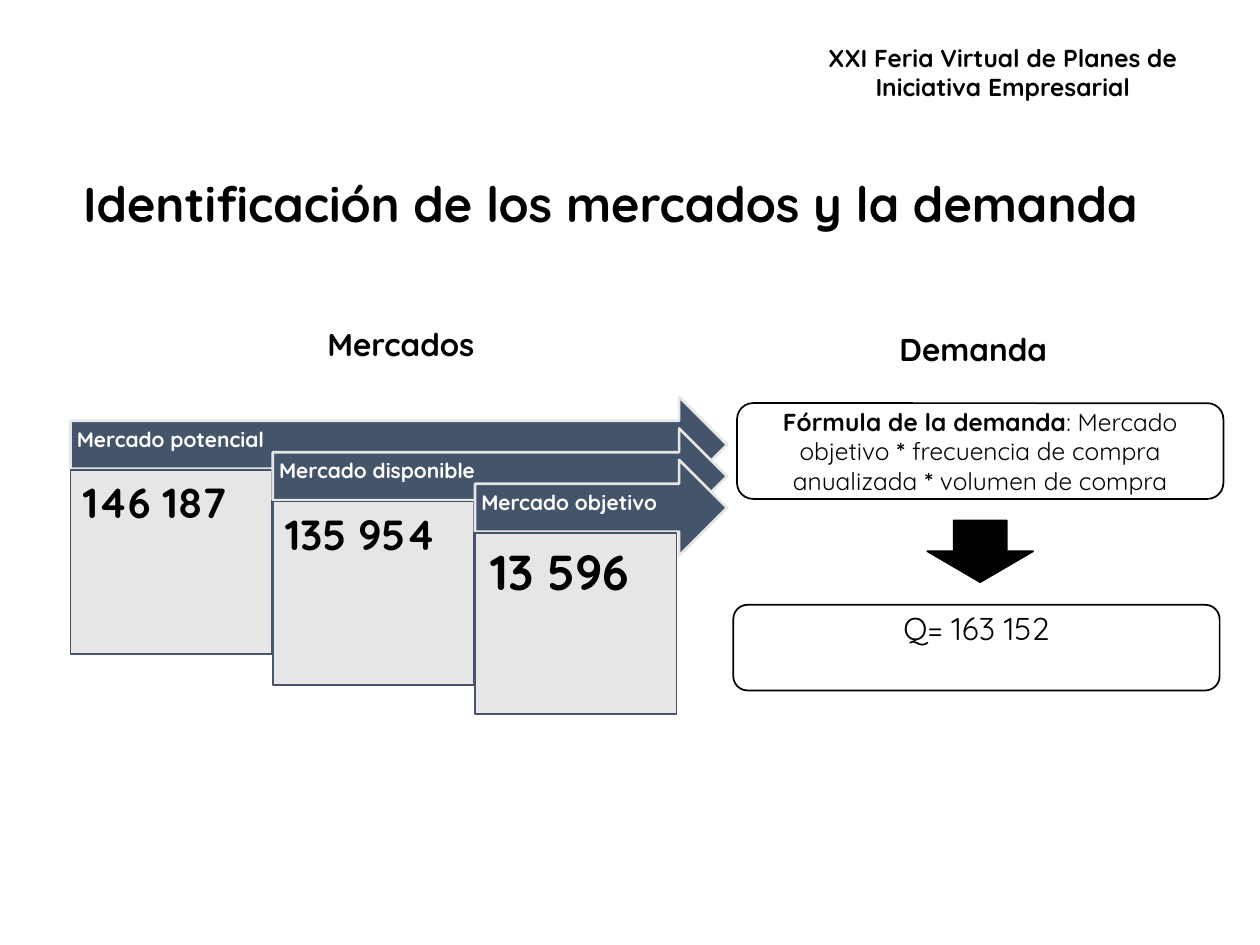
import pptx
import pptx.util
import pptx.dml.color
from pptx.enum.shapes import MSO_SHAPE
from pptx.enum.text import MSO_ANCHOR, PP_ALIGN
from pptx.util import Inches

COLORS = {"black": "000000", "white": "FFFFFF", "navy": "44546A", "gray": "E7E6E6"}


def rgb(name):
    return pptx.dml.color.RGBColor.from_string(COLORS[name])


def write(sp, runs, size, color="black", align=PP_ALIGN.LEFT, spacing=1.0,
          insets=(0.1, 0.05, 0.1, 0.05), **frame):
    """Fill one paragraph with (text, bold) runs; insets are left, top, right, bottom."""
    tf = sp.text_frame
    for side, inset in zip(("left", "top", "right", "bottom"), insets):
        setattr(tf, f"margin_{side}", Inches(inset))
    for key, value in {"word_wrap": True, "vertical_anchor": MSO_ANCHOR.TOP, **frame}.items():
        setattr(tf, key, value)
    p = tf.paragraphs[0]
    p.alignment = align
    p.line_spacing = spacing
    for text, bold in runs:
        r = p.add_run()
        r.text = text
        style = {"name": "Quicksand", "size": pptx.util.Pt(size), "bold": bold}
        for key, value in style.items():
            setattr(r.font, key, value)
        r.font.color.rgb = rgb(color)


prs = pptx.Presentation()
prs.slide_width, prs.slide_height = Inches(10), Inches(7.5)
s = prs.slides.add_slide(prs.slide_layouts[5])

# Title
title = s.shapes.title
title.left, title.top, title.width, title.height = map(Inches, (0.56, 1.28, 8.62, 0.72))
write(title, [("Identificación de los mercados y la demanda", True)], 28,
      spacing=0.9, vertical_anchor=MSO_ANCHOR.MIDDLE)

# Event name and column headings
labels = [
    ("XXI Feria Virtual de Planes de Iniciativa Empresarial",
     (6.29, 0.29, 3.34, 0.57), 14, PP_ALIGN.CENTER, True),
    ("Mercados", (2.5, 2.53, 1.45, 0.4), 18, PP_ALIGN.LEFT, False),
    ("Demanda", (7.04, 2.57, 1.42, 0.4), 18, PP_ALIGN.LEFT, False),
]
for text, box, size, align, wrap in labels:
    tb = s.shapes.add_textbox(*map(Inches, box))
    write(tb, [(text, True)], size, align=align, word_wrap=wrap)

# Shapes: kind, position, fill, line, line width
shapes = []
markets = [
    ("Mercado potencial", "146 187", 24, 1.46, 0.1),
    ("Mercado disponible", "135 954", 24, 1.46, 0.1),
    ("Mercado objetivo", "13 596", 28, 1.44, 0.12),
]
LEFT, TOP, RIGHT = 0.56, 3.15, 5.77
STEP_X, STEP_Y = 1.605, 0.25
for i, (name, value, size, height, inset) in enumerate(markets):
    x, y = LEFT + i * STEP_X, TOP + i * STEP_Y
    arrow_text = dict(runs=[(name, True)], size=12, color="white", spacing=0.9,
                      insets=(0.05, 0.05, 0.28, 0.12), vertical_anchor=MSO_ANCHOR.MIDDLE)
    value_text = dict(runs=[(value, True)], size=size, spacing=0.9, insets=(inset,) * 4)
    shapes += [
        (MSO_SHAPE.RIGHT_ARROW, (x, y, RIGHT - x, 0.76), "navy", "gray", 1.5, arrow_text),
        (MSO_SHAPE.RECTANGLE, (x, y + 0.58, 1.6, height), "gray", "navy", 1, value_text),
    ]

formula = [
    ("Fórmula de la demanda", True), (": Mercado objetivo ", False), ("*", True),
    (" frecuencia de compra anualizada ", False), ("*", True), (" volumen de compra", False),
]
formula_text = dict(runs=formula, size=14, align=PP_ALIGN.CENTER,
                    vertical_anchor=MSO_ANCHOR.MIDDLE)
result_text = dict(runs=[("Q= 163 152", False)], size=18, align=PP_ALIGN.CENTER,
                   insets=(0.1, 0, 0.1, 0))
shapes += [
    (MSO_SHAPE.ROUNDED_RECTANGLE, (5.85, 3.2, 3.86, 0.76), "white", "black", 1, formula_text),
    (MSO_SHAPE.ROUNDED_RECTANGLE, (5.82, 4.8, 3.86, 0.68), "white", "black", 1, result_text),
    (MSO_SHAPE.DOWN_ARROW, (7.36, 4.13, 0.84, 0.49), "black", "black", 1, None),
]

for kind, box, fill, line, width, text in shapes:
    sp = s.shapes.add_shape(kind, *map(Inches, box))
    sp.shadow.inherit = False
    sp.fill.solid()
    sp.fill.fore_color.rgb = rgb(fill)
    sp.line.color.rgb = rgb(line)
    sp.line.width = pptx.util.Pt(width)
    if text:
        write(sp, **text)

prs.save("out.pptx")
